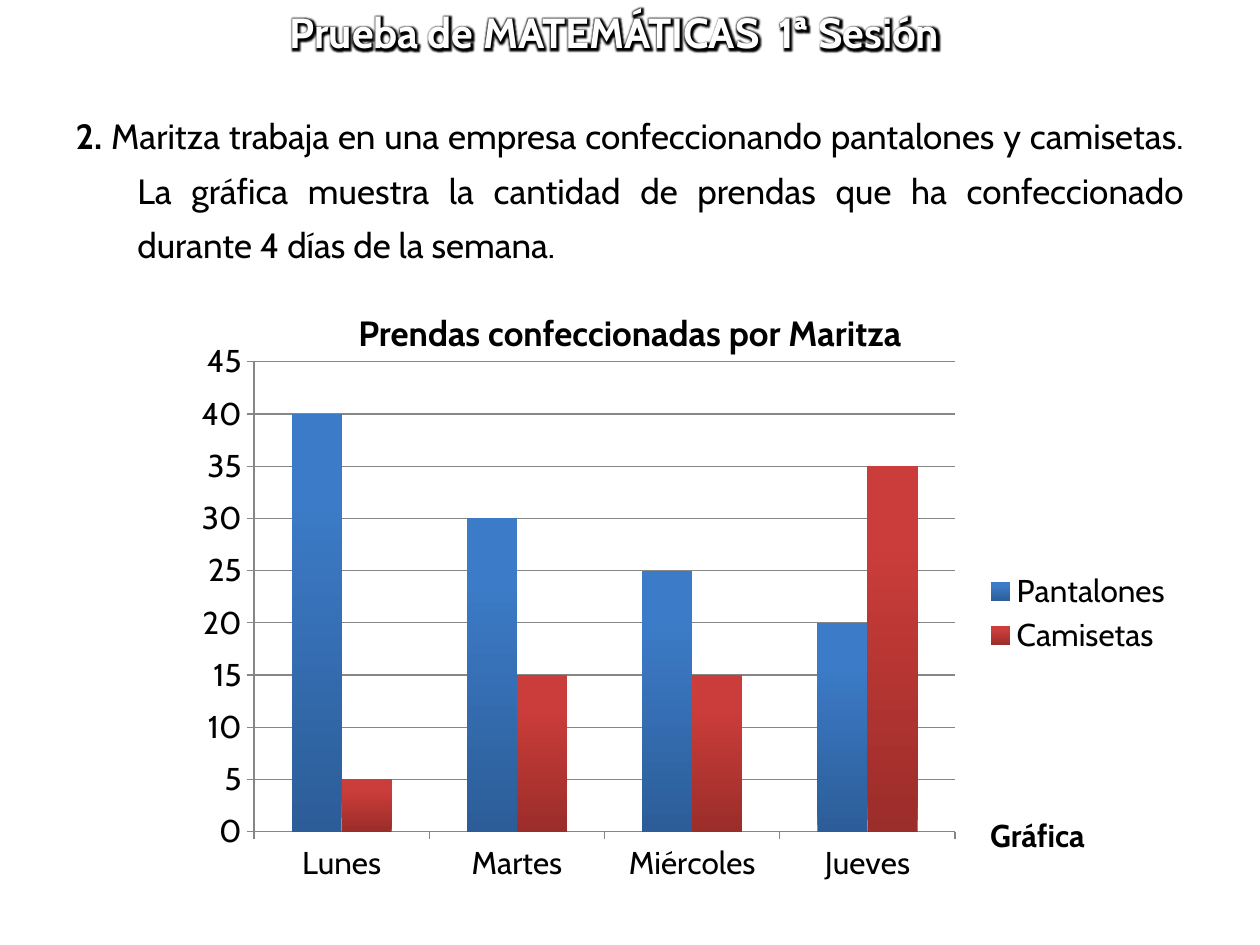
from dataclasses import dataclass

from lxml.etree import SubElement
from pptx import Presentation
from pptx.chart.data import CategoryChartData
from pptx.dml.color import RGBColor
from pptx.enum.chart import XL_CHART_TYPE, XL_LEGEND_POSITION, XL_TICK_MARK
from pptx.enum.text import MSO_ANCHOR, MSO_AUTO_SIZE, PP_ALIGN
from pptx.oxml import parse_xml
from pptx.oxml.ns import nsdecls, qn
from pptx.util import Inches, Pt


@dataclass(frozen=True)
class Theme:
    font: str = "Cabin"
    text: str = "000000"
    title: str = "FFFFFF"
    grid: str = "868686"
    title_size: int = 24
    body_size: int = 20
    chart_size: int = 18


@dataclass(frozen=True)
class Garment:
    name: str
    values: tuple[int, ...]
    dark: str
    light: str


THEME = Theme()
DAYS = ("Lunes", "Martes", "Miércoles", "Jueves")
GARMENTS = (
    Garment("Pantalones", (40, 30, 25, 20), "2C5D98", "3C7BC7"),
    Garment("Camisetas", (5, 15, 15, 35), "9B2D2A", "CB3D3A"),
)


def place(sp, left: float, top: float, width: float, height: float) -> None:
    box = {"left": left, "top": top, "width": width, "height": height}
    for name, value in box.items():
        setattr(sp, name, Inches(value))


def style_font(font, size: int, bold: bool = False, color: str = THEME.text) -> None:
    for name, value in {"name": THEME.font, "size": Pt(size), "bold": bold}.items():
        setattr(font, name, value)
    font.color.rgb = RGBColor.from_string(color)


def add_run(p, text: str, size: int, bold: bool = False, color: str = THEME.text):
    r = p.add_run()
    r.text = text
    style_font(r.font, size, bold, color)
    return r


def format_paragraph(p, align, indent: float = 0, before: float = 0) -> None:
    """Set an unbulleted paragraph with a hanging indent in inches."""
    pPr = p._p.get_or_add_pPr()
    pPr.set("marL", str(Inches(indent)))
    pPr.set("indent", str(-Inches(indent)))
    SubElement(pPr, qn("a:buNone"))
    values = {"alignment": align, "line_spacing": 1.3, "space_before": Pt(before)}
    for name, value in values.items():
        setattr(p, name, value)


def add_title(slide) -> None:
    sp = slide.shapes.title
    place(sp, 2.2, -0.09, 7.6, 0.69)
    tf = sp.text_frame
    tf.auto_size = MSO_AUTO_SIZE.NONE
    tf.vertical_anchor = MSO_ANCHOR.MIDDLE
    p = tf.paragraphs[0]
    p.alignment = PP_ALIGN.LEFT
    r = add_run(p, "Prueba de MATEMÁTICAS  1ª Sesión", THEME.title_size, True, THEME.title)
    glow = parse_xml(
        f'<a:effectLst {nsdecls("a")}><a:glow rad="{Pt(5)}">'
        f'<a:srgbClr val="{THEME.text}"/></a:glow></a:effectLst>'
    )
    r.font._element.find(qn("a:solidFill")).addnext(glow)


def add_question(slide) -> None:
    sp = slide.placeholders[1]
    place(sp, 0.5, 0.76, 9, 5.91)
    tf = sp.text_frame
    tf.auto_size = MSO_AUTO_SIZE.NONE
    p = tf.paragraphs[0]
    format_paragraph(p, PP_ALIGN.JUSTIFY, indent=0.49)
    add_run(p, "2. ", THEME.body_size, True)
    add_run(
        p,
        "Maritza trabaja en una empresa confeccionando pantalones y camisetas. "
        "La gráfica muestra la cantidad de prendas que ha confeccionado "
        "durante 4 días de la semana.",
        THEME.body_size,
    )
    p = tf.add_paragraph()
    format_paragraph(p, PP_ALIGN.CENTER, before=19)
    add_run(p, "Prendas confeccionadas por Maritza", THEME.body_size, True)


def set_plot_area(chart, x: float, y: float, w: float, h: float) -> None:
    """Fix the inner plot area, in fractions of the chart."""
    plot_area = chart._chartSpace.find(f".//{qn('c:plotArea')}")
    for old in plot_area.findall(qn("c:layout")):
        plot_area.remove(old)
    sizes = "".join(
        f'<c:{name} val="{value}"/>' for name, value in zip("xywh", (x, y, w, h))
    )
    plot_area.insert(0, parse_xml(
        f'<c:layout {nsdecls("c")}><c:manualLayout><c:layoutTarget val="inner"/>'
        f'<c:xMode val="edge"/><c:yMode val="edge"/>{sizes}</c:manualLayout></c:layout>'
    ))


def style_line(line) -> None:
    line.color.rgb = RGBColor.from_string(THEME.grid)
    line.width = Pt(0.75)


def add_garment_chart(slide) -> None:
    data = CategoryChartData()
    data.categories = DAYS
    for garment in GARMENTS:
        data.add_series(garment.name, garment.values)
    chart = slide.shapes.add_chart(
        XL_CHART_TYPE.COLUMN_CLUSTERED,
        Inches(1.46), Inches(2.65), Inches(7.95), Inches(4.44), data,
    ).chart
    style_font(chart.font, THEME.chart_size)
    chart.has_title = False
    chart.has_legend = True
    chart.legend.position = XL_LEGEND_POSITION.RIGHT
    chart.legend.include_in_layout = False
    set_plot_area(chart, 0.07, 0.05, 0.7, 0.84)

    for axis in (chart.category_axis, chart.value_axis):
        axis.major_tick_mark = XL_TICK_MARK.OUTSIDE
        axis.minor_tick_mark = XL_TICK_MARK.NONE
        style_line(axis.format.line)
    scale = {"minimum_scale": 0, "maximum_scale": 45, "major_unit": 5,
             "has_major_gridlines": True}
    for name, value in scale.items():
        setattr(chart.value_axis, name, value)
    style_line(chart.value_axis.major_gridlines.format.line)

    plot = chart.plots[0]
    for name, value in {"gap_width": 150, "overlap": 0, "vary_by_categories": False}.items():
        setattr(plot, name, value)
    for series, garment in zip(plot.series, GARMENTS):
        fill = series.format.fill
        fill.gradient()
        fill.gradient_angle = 90
        stops = ((0, garment.dark), (0.8, garment.light))
        for stop, (position, color) in zip(fill.gradient_stops, stops):
            stop.position = position
            stop.color.rgb = RGBColor.from_string(color)


def add_chart_label(slide) -> None:
    sp = slide.shapes.add_textbox(Inches(7.76), Inches(6.43), Inches(1.1), Inches(0.4))
    tf = sp.text_frame
    tf.word_wrap = False
    tf.auto_size = MSO_AUTO_SIZE.SHAPE_TO_FIT_TEXT
    add_run(tf.paragraphs[0], "Gráfica", THEME.chart_size, True)


def main() -> None:
    prs = Presentation()
    prs.slide_width, prs.slide_height = Inches(10), Inches(7.5)
    slide = prs.slides.add_slide(prs.slide_layouts[1])
    add_title(slide)
    add_question(slide)
    add_garment_chart(slide)
    add_chart_label(slide)
    prs.save("out.pptx")


if __name__ == "__main__":
    main()
